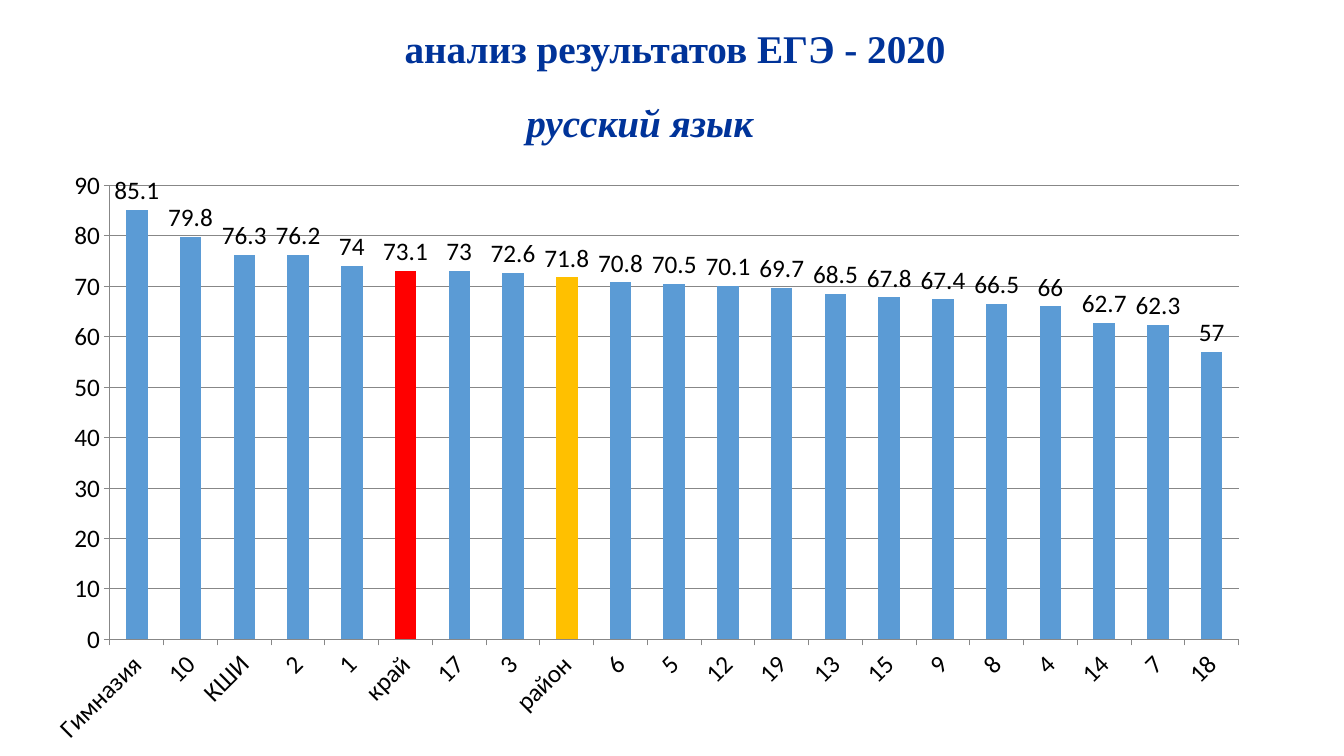
import pptx
import pptx.chart.data
import pptx.dml.color
import pptx.enum.chart
import pptx.enum.text
import pptx.util

PX = 9144  # EMU per px, 100 px to the inch


def px(*lengths):
    return [pptx.util.Emu(length * PX) for length in lengths]


def color(text):
    return pptx.dml.color.RGBColor.from_string(text)


deck = pptx.Presentation()
deck.slide_width, deck.slide_height = px(1333, 750)
slide = deck.slides.add_slide(deck.slide_layouts[5])

# Headings
title = slide.shapes.title
title.left, title.top, title.width, title.height = px(245, 31, 849, 38)
subject = slide.shapes.add_textbox(*px(485, 93, 299, 56))
headings = [
    (title, "анализ результатов ЕГЭ - 2020", False, pptx.enum.text.MSO_ANCHOR.MIDDLE),
    (subject, "русский язык", True, pptx.enum.text.MSO_ANCHOR.TOP),
]
for box, wording, italic, anchor in headings:
    frame = box.text_frame
    frame.word_wrap = True
    frame.auto_size = pptx.enum.text.MSO_AUTO_SIZE.NONE
    frame.vertical_anchor = anchor
    para = frame.paragraphs[0]
    para.alignment = pptx.enum.text.PP_ALIGN.CENTER
    span = para.add_run()
    span.text = wording
    span.font.name = "Times New Roman"
    span.font.size = pptx.util.Pt(28)
    span.font.bold = True
    span.font.italic = italic
    span.font.color.rgb = color("003399")
title.text_frame.paragraphs[0].line_spacing = 0.9

# Average scores by school
scores = [
    ("Гимназия", 85.1), ("10", 79.8), ("КШИ", 76.3), ("2", 76.2), ("1", 74),
    ("край", 73.1), ("17", 73), ("3", 72.6), ("район", 71.8), ("6", 70.8),
    ("5", 70.5), ("12", 70.1), ("19", 69.7), ("13", 68.5), ("15", 67.8),
    ("9", 67.4), ("8", 66.5), ("4", 66), ("14", 62.7), ("7", 62.3), ("18", 57),
]
highlights = {"край": "FF0000", "район": "FFC000"}
data = pptx.chart.data.CategoryChartData()
data.categories = [school for school, score in scores]
data.add_series("Series 1", [score for school, score in scores])
chart = slide.shapes.add_chart(
    pptx.enum.chart.XL_CHART_TYPE.COLUMN_CLUSTERED, *px(28, 157, 1225, 593), data
).chart
chart.has_legend = False
chart.has_title = False
chart.font.name = "Calibri"
chart.font.size = pptx.util.Pt(18)
chart.font.color.rgb = color("000000")

plot = chart.plots[0]
plot.gap_width = 150
plot.vary_by_categories = False
plot.has_data_labels = True
plot.data_labels.show_value = True
plot.data_labels.position = pptx.enum.chart.XL_LABEL_POSITION.OUTSIDE_END

series = plot.series[0]
series.format.fill.solid()
series.format.fill.fore_color.rgb = color("5B9BD5")
for index, (school, score) in enumerate(scores):
    if school in highlights:
        fill = series.points[index].format.fill
        fill.solid()
        fill.fore_color.rgb = color(highlights[school])

value_axis = chart.value_axis
value_axis.minimum_scale = 0
value_axis.maximum_scale = 90
value_axis.major_unit = 10
value_axis.has_major_gridlines = True
for line in (
    value_axis.major_gridlines.format.line,
    value_axis.format.line,
    chart.category_axis.format.line,
):
    line.color.rgb = color("878787")
    line.width = pptx.util.Pt(0.75)
for axis in (value_axis, chart.category_axis):
    axis.major_tick_mark = pptx.enum.chart.XL_TICK_MARK.OUTSIDE
    axis.minor_tick_mark = pptx.enum.chart.XL_TICK_MARK.NONE

deck.save("out.pptx")
